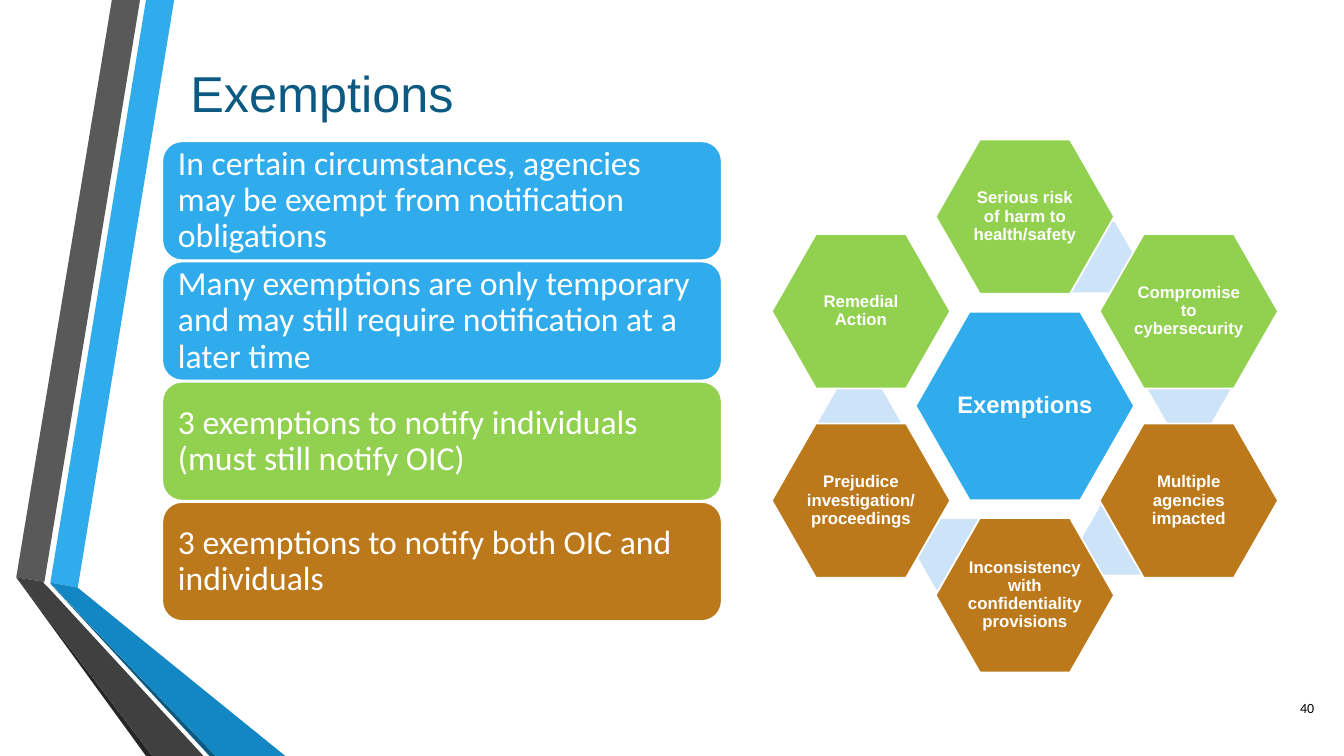
import math

from pptx import Presentation
from pptx.dml import color
from pptx.enum import shapes, text
from pptx.util import Cm, Pt

WHITE, BLUE, GREEN, BROWN = "FFFFFF", "30ACEC", "92D050", "BC791C"
NAVY, PALE = "0C5A82", "CDE3F8"

RIBBONS = [
    (BLUE, [(127, 1468), (196, 1481), (439, 0), (368, 0)]),
    ("595959", [(353, 0), (282, 0), (41, 1455), (112, 1466)]),
    ("262626", [(41, 1455), (368, 1905), (384, 1905)]),
    (NAVY, [(127, 1471), (528, 1905), (544, 1905)]),
    ("1287C3", [(127, 1470), (544, 1905), (719, 1905), (196, 1481), (127, 1468)]),
    ("404040", [(513, 1905), (122, 1481), (109, 1468), (112, 1466), (41, 1455), (384, 1905)]),
]
STATEMENTS = [
    ("In certain circumstances, agencies may be exempt from notification obligations", BLUE),
    ("Many exemptions are only temporary and may still require notification at a later time", BLUE),
    ("3 exemptions to notify individuals (must still notify OIC)", GREEN),
    ("3 exemptions to notify both OIC and individuals", BROWN),
]
EXEMPTIONS = [
    ("Serious risk of harm to health/safety", GREEN, (26.52, 5.59)),
    ("Compromise to cybersecurity", GREEN, (28.93, 8.92)),
    ("Multiple agencies impacted", BROWN, (27.25, 12.7)),
    ("Inconsistency with confidentiality provisions", BROWN, (23.09, 13.08)),
    ("Prejudice investigation/proceedings", BROWN, (20.62, 9.75)),
    ("Remedial Action", GREEN, None),
]
HEXAGON_CENTER = (25.83, 10.23)
HEXAGON_RADIUS = 4.77


def rgb(value):
    return color.RGBColor.from_string(value)


def paint(shape, fill, line=None):
    shape.shadow.inherit = False
    shape.fill.solid()
    shape.fill.fore_color.rgb = rgb(fill)
    if line:
        shape.line.color.rgb = rgb(line)
        shape.line.width = Pt(1.25)
    else:
        shape.line.fill.background()


def write(shape, content, size, font="Arial", ink=WHITE, bold=False,
          align=text.PP_ALIGN.LEFT, spacing=1.0, inset=(0.25, 0.13)):
    frame = shape.text_frame
    frame.word_wrap = True
    frame.vertical_anchor = text.MSO_ANCHOR.MIDDLE
    frame.margin_left = frame.margin_right = Cm(inset[0])
    frame.margin_top = frame.margin_bottom = Cm(inset[1])
    paragraph = frame.paragraphs[0]
    paragraph.alignment = align
    paragraph.line_spacing = spacing
    run = paragraph.add_run()
    run.text = content
    run.font.name = font
    run.font.size = Pt(size)
    run.font.bold = bold
    run.font.color.rgb = rgb(ink)


def add_label(slide, content, left, top, width, height, **style):
    box = slide.shapes.add_textbox(Cm(left), Cm(top), Cm(width), Cm(height))
    write(box, content, **style)


def add_ribbon(slide, fill, points):
    builder = slide.shapes.build_freeform(*points[0], scale=Cm(0.01))
    builder.add_line_segments(points[1:], close=True)
    paint(builder.convert_to_shape(), fill)


def add_statement(slide, content, fill, top):
    shape = slide.shapes.add_shape(
        shapes.MSO_SHAPE.ROUNDED_RECTANGLE, Cm(4.09), Cm(top), Cm(14.1), Cm(3))
    paint(shape, fill, WHITE)
    write(shape, content, size=24, font="Calibri", spacing=0.9, inset=(0.25, 0.25))


def add_hexagon(slide, left, top, width, height, fill, line=None):
    shape = slide.shapes.add_shape(
        shapes.MSO_SHAPE.HEXAGON, Cm(left), Cm(top), Cm(width), Cm(height))
    shape.adjustments[0] = 0.286
    paint(shape, fill, line)
    return shape


def add_named_hexagon(slide, content, center, width, height, fill, size):
    shape = add_hexagon(slide, center[0] - width / 2, center[1] - height / 2,
                        width, height, fill, WHITE)
    write(shape, content, size=size, bold=True, align=text.PP_ALIGN.CENTER,
          spacing=0.9, inset=(0.05, 0.05))


def add_exemption_ring(slide):
    add_named_hexagon(slide, "Exemptions", HEXAGON_CENTER, 5.51, 4.75, BLUE, 17)
    for index, (content, fill, link) in enumerate(EXEMPTIONS):
        if link:
            add_hexagon(slide, *link, 2.08, 1.78, PALE)
        angle = math.radians(60 * index)
        center = (HEXAGON_CENTER[0] + HEXAGON_RADIUS * math.sin(angle),
                  HEXAGON_CENTER[1] - HEXAGON_RADIUS * math.cos(angle))
        add_named_hexagon(slide, content, center, 4.5, 3.89, fill, 12)


def main():
    presentation = Presentation()
    presentation.slide_width = Cm(33.87)
    presentation.slide_height = Cm(19.05)
    slide = presentation.slides.add_slide(presentation.slide_layouts[6])
    for fill, points in RIBBONS:
        add_ribbon(slide, fill, points)
    add_label(slide, "Exemptions", 4.55, 1.12, 11.79, 2.44, size=36, ink=NAVY)
    for index, (content, fill) in enumerate(STATEMENTS):
        add_statement(slide, content, fill, 3.56 + 3.03 * index)
    add_exemption_ring(slide)
    add_label(slide, "40", 31.85, 17.32, 1.52, 1.02, size=10, font="Calibri",
              ink="000000", align=text.PP_ALIGN.RIGHT)
    presentation.save("out.pptx")


if __name__ == "__main__":
    main()
